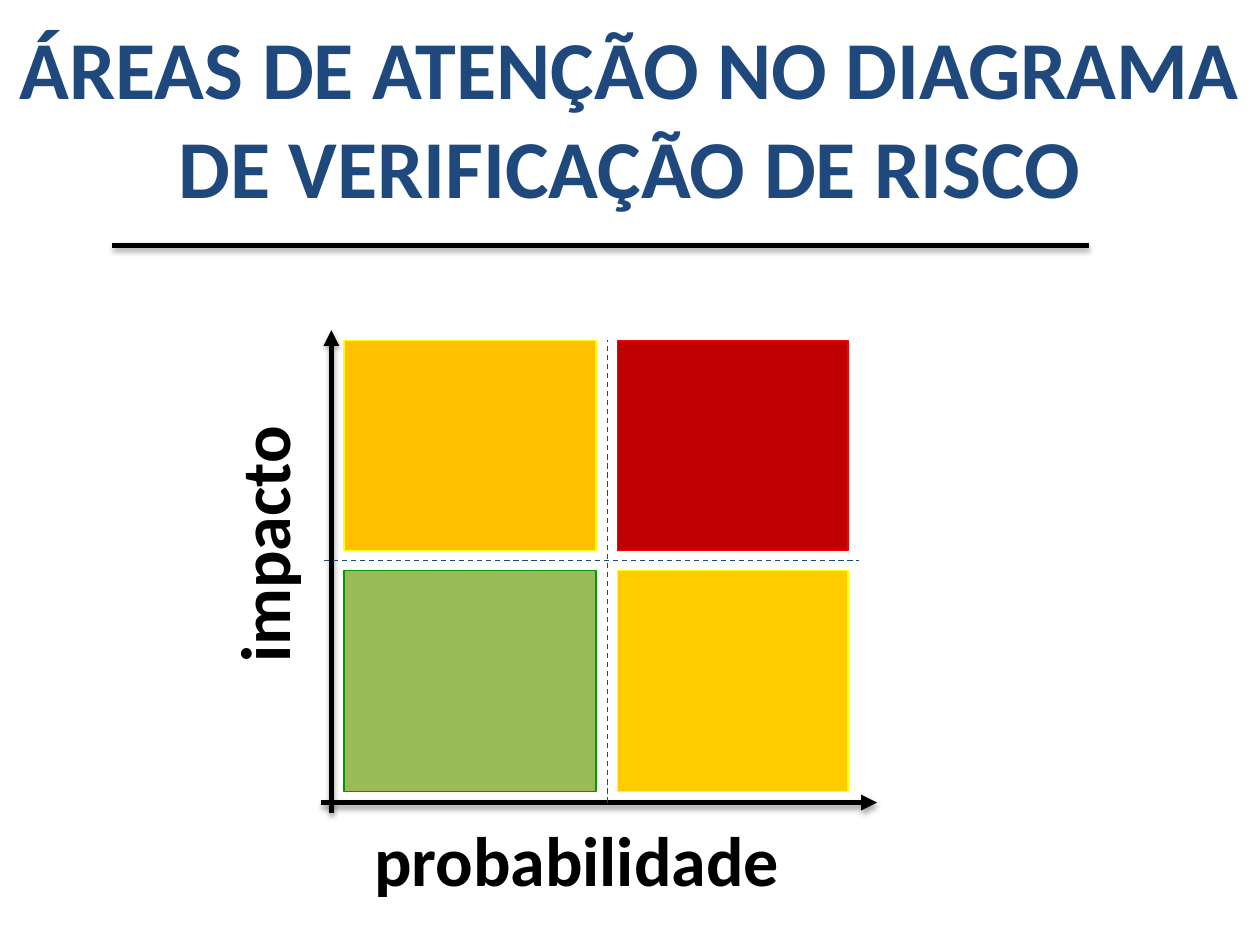
from lxml import etree
from pptx import Presentation
from pptx import util as u
from pptx.dml.color import RGBColor
from pptx.enum import dml, shapes, text
from pptx.oxml.ns import qn

NAVY = RGBColor(0x1F, 0x49, 0x7D)
BLACK = RGBColor(0x00, 0x00, 0x00)
GREEN = RGBColor(0x9B, 0xBB, 0x59)
DARK_GREEN = RGBColor(0x00, 0x99, 0x00)
GOLD = RGBColor(0xFF, 0xCC, 0x00)
AMBER = RGBColor(0xFF, 0xC0, 0x00)
YELLOW = RGBColor(0xFF, 0xFF, 0x00)
DARK_RED = RGBColor(0xC0, 0x00, 0x00)
RED = RGBColor(0xFF, 0x00, 0x00)

# Matrix columns (left, width) and rows (top, height), in inches
COLUMNS = [(2.73, 2.0), (4.9, 1.83)]
ROWS = [(2.7, 1.67), (4.53, 1.75)]
# Fill and outline of each area, row by row
AREAS = [
    [(AMBER, YELLOW), (DARK_RED, RED)],
    [(GREEN, DARK_GREEN), (GOLD, YELLOW)],
]


def place(shape, left, top, width, height):
    shape.left, shape.top = u.Inches(left), u.Inches(top)
    shape.width, shape.height = u.Inches(width), u.Inches(height)


def write_text(shape, content, *, size, color=BLACK, align=text.PP_ALIGN.LEFT,
               line_spacing=1.0, direction=None):
    frame = shape.text_frame
    frame.word_wrap = True
    frame.auto_size = text.MSO_AUTO_SIZE.NONE
    frame.vertical_anchor = text.MSO_ANCHOR.MIDDLE
    if direction:
        shape.element.txBody.find(qn("a:bodyPr")).set("vert", direction)
    paragraph = frame.paragraphs[0]
    paragraph.alignment = align
    paragraph.line_spacing = line_spacing
    paragraph.space_before = u.Pt(0)
    run = paragraph.add_run()
    run.text = content
    run.font.name = "Calibri"
    run.font.size = u.Pt(size)
    run.font.bold = True
    run.font.color.rgb = color


def add_label(slide, content, box, direction=None):
    label = slide.shapes.add_textbox(*(u.Inches(value) for value in box))
    write_text(label, content, size=40, line_spacing=0.7, direction=direction)


def add_line(slide, start, end, *, color=BLACK, width=3, dashed=False,
             arrow=False, shadow=True):
    line = slide.shapes.add_connector(
        shapes.MSO_CONNECTOR.STRAIGHT,
        *(u.Inches(value) for value in (*start, *end)))
    line.line.color.rgb = color
    line.line.width = u.Pt(width)
    if dashed:
        line.line.dash_style = dml.MSO_LINE.DASH
    properties = line.element.spPr
    if arrow:
        etree.SubElement(properties.find(qn("a:ln")), qn("a:tailEnd"),
                         type="triangle")
    effects = etree.SubElement(properties, qn("a:effectLst"))
    if shadow:
        outer = etree.SubElement(
            effects, qn("a:outerShdw"), blurRad=str(u.Pt(3.1)),
            dist=str(u.Pt(1.8)), dir="5400000", rotWithShape="0")
        shade = etree.SubElement(outer, qn("a:srgbClr"), val=str(BLACK))
        etree.SubElement(shade, qn("a:alpha"), val="35000")


def add_area(slide, box, fill, outline):
    area = slide.shapes.add_shape(shapes.MSO_SHAPE.RECTANGLE,
                                  *(u.Inches(value) for value in box))
    area.shadow.inherit = False
    area.fill.solid()
    area.fill.fore_color.rgb = fill
    area.line.color.rgb = outline
    area.line.width = u.Pt(0.75)


def main():
    presentation = Presentation()
    presentation.slide_width = u.Inches(10)
    presentation.slide_height = u.Inches(7.5)
    slide = presentation.slides.add_slide(presentation.slide_layouts[5])

    # Title and rule below it
    title = slide.shapes.title
    place(title, 0, 0.08, 10, 1.68)
    write_text(title, "ÁREAS DE ATENÇÃO NO DIAGRAMA DE VERIFICAÇÃO DE RISCO",
               size=47, color=NAVY, align=text.PP_ALIGN.CENTER)
    add_line(slide, (0.89, 1.95), (8.64, 1.95))

    # Axes and their labels
    add_line(slide, (2.63, 6.45), (2.63, 2.62), arrow=True)
    add_line(slide, (2.55, 6.37), (6.96, 6.37), arrow=True)
    add_label(slide, "probabilidade", (2.87, 6.61, 3.92, 0.57))
    add_label(slide, "impacto", (1.8, 3.03, 0.73, 2.33), direction="vert270")

    # Dashed dividers
    for start, end in [((4.82, 6.37), (4.82, 2.7)),
                       ((2.57, 4.45), (6.82, 4.45))]:
        add_line(slide, start, end, color=NAVY, width=0.75, dashed=True,
                 shadow=False)

    # Risk areas
    for (top, height), row in zip(ROWS, AREAS):
        for (left, width), (fill, outline) in zip(COLUMNS, row):
            add_area(slide, (left, top, width, height), fill, outline)

    presentation.save("out.pptx")


if __name__ == "__main__":
    main()
